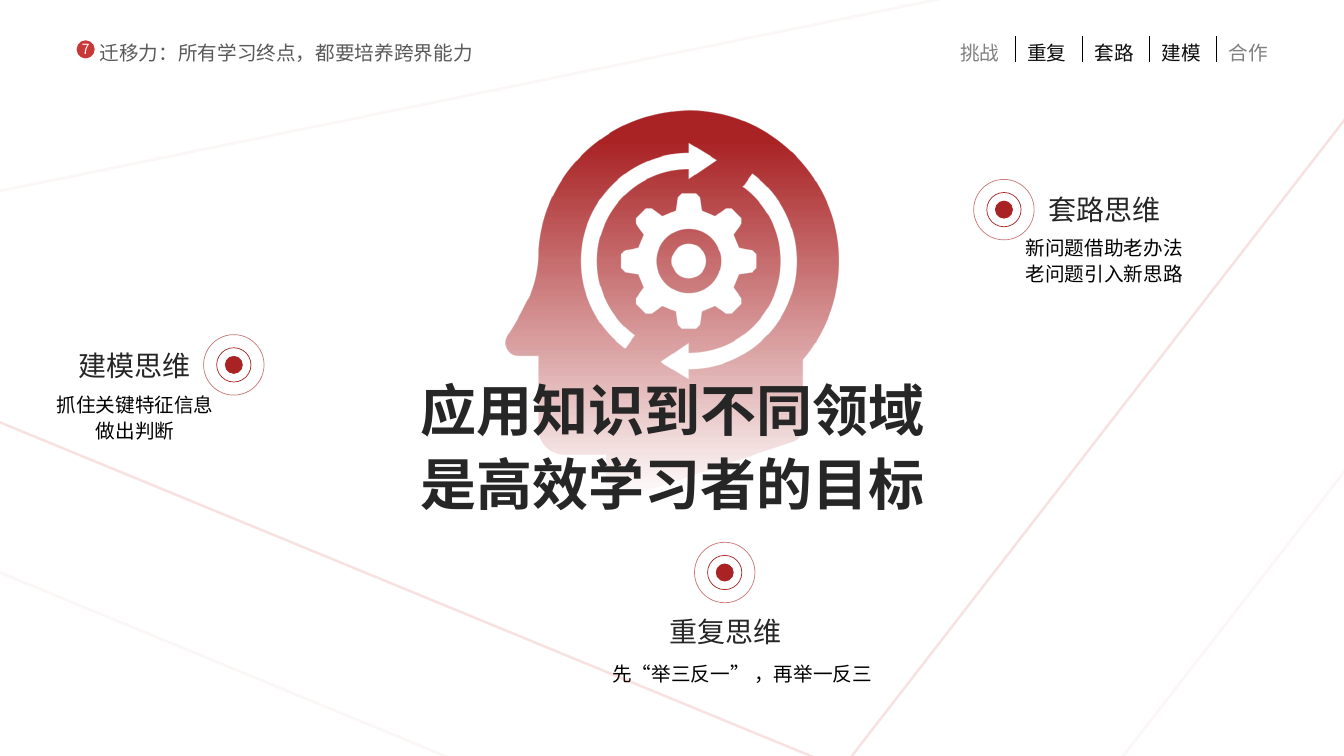
import math

import lxml.etree
import pptx
import pptx.dml.color
import pptx.enum.shapes
import pptx.enum.text
import pptx.oxml.ns
import pptx.util

Inches, Pt = pptx.util.Inches, pptx.util.Pt
RGBColor = pptx.dml.color.RGBColor
PP_ALIGN, MSO_ANCHOR = pptx.enum.text.PP_ALIGN, pptx.enum.text.MSO_ANCHOR
OVAL = pptx.enum.shapes.MSO_SHAPE.OVAL
STRAIGHT = pptx.enum.shapes.MSO_CONNECTOR.STRAIGHT
qn = pptx.oxml.ns.qn

FONT = "Noto Sans CJK SC"
RED = RGBColor(0xCA, 0x37, 0x37)
DEEP_RED = RGBColor(0xA9, 0x22, 0x24)
WHITE = RGBColor(0xFF, 0xFF, 0xFF)
BLACK = RGBColor(0, 0, 0)
NEAR_BLACK = RGBColor(0x0D, 0x0D, 0x0D)
DARK = RGBColor(0x26, 0x26, 0x26)
GREY = RGBColor(0x59, 0x59, 0x59)
LIGHT_GREY = RGBColor(0x80, 0x80, 0x80)
MIL = Inches(1) / 1000  # freeform unit: a thousandth of an inch


def write(frame, text, size, color, spacing=1.0, align=PP_ALIGN.CENTER,
          anchor=MSO_ANCHOR.TOP, bold=False):
    frame.text = text
    frame.word_wrap = True
    frame.vertical_anchor = anchor
    for para in frame.paragraphs:
        para.alignment = align
        para.line_spacing = spacing
        para.space_before = Pt(0)
        for span in para.runs:
            span.font.size = Pt(size)
            span.font.bold = bold
            span.font.color.rgb = color
            span.font.name = FONT
            east_asian = lxml.etree.SubElement(span.font._element, qn("a:ea"))
            east_asian.set("typeface", FONT)


def fade(element, percent):
    for color in element.iter(qn("a:srgbClr")):
        lxml.etree.SubElement(color, qn("a:alpha")).set("val", str(percent * 1000))


deck = pptx.Presentation()
deck.slide_width, deck.slide_height = Inches(40 / 3), Inches(7.5)
page = deck.slides.add_slide(deck.slide_layouts[5])
shapes = page.shapes

# Header with number badge
header = shapes.add_textbox(Inches(0.89), Inches(0.31), Inches(4.66), Inches(0.38))
write(header.text_frame, "迁移力：所有学习终点，都要培养跨界能力", 14, GREY, 1.2, PP_ALIGN.LEFT)
badge = shapes.add_shape(OVAL, Inches(0.76), Inches(0.4), Inches(0.18), Inches(0.18))
badge.shadow.inherit = False
badge.fill.solid()
badge.fill.fore_color.rgb = RED
badge.line.fill.background()
frame = badge.text_frame
frame.margin_left = frame.margin_right = frame.margin_top = frame.margin_bottom = 0
write(frame, "7", 10, WHITE, anchor=MSO_ANCHOR.MIDDLE)
frame.word_wrap = False

# Navigation labels, and every straight line: start, end, colour, width, opacity
lines = []
labels = ["挑战", "重复", "套路", "建模", "合作"]
for index, label in enumerate(labels):
    left = 9.38 + index * 2 / 3
    box = shapes.add_textbox(Inches(left), Inches(0.31), Inches(0.68), Inches(0.38))
    is_end = index in (0, len(labels) - 1)
    write(box.text_frame, label, 14, LIGHT_GREY if is_end else NEAR_BLACK, 1.2)
    if not is_end or index == 0:
        lines.append((left + 0.69, 0.36, left + 0.69, 0.62, BLACK, 0.5, 100))
lines += [
    (-1.92, 3.4, 8.36, 7.63, RED, 1.75, 14),
    (8.35, 7.63, 14.19, 0.09, RED, 1.75, 14),
]

# Large faint triangle behind everything
builder = shapes.build_freeform(-6140, 3150, MIL)
builder.add_line_segments([(18430, -1870), (9510, 9600)])
triangle = builder.convert_to_shape()
triangle.shadow.inherit = False
triangle.fill.background()
triangle.line.color.rgb = RED
triangle.line.width = Pt(2)
fade(triangle.element.spPr, 4)

# Three ways of thinking: target centre, heading place, heading, note place, note
topics = [
    (7.19, 5.68, 6.36, 6.05, "重复思维", 5.88, 6.49, 2.97, "先“举三反一” ，再举一反三"),
    (9.96, 2.08, 10.12, 1.86, "套路思维", 9.74, 2.27, 2.43, "新问题借助老办法\n老问题引入新思路"),
    (2.32, 3.62, 0.5, 3.41, "建模思维", 0.4, 3.83, 1.88, "抓住关键特征信息\n做出判断"),
]
for x, y, heading_x, heading_y, heading, note_x, note_y, note_width, note in topics:
    for size in (0.17, 0.34, 0.6):
        circle = shapes.add_shape(OVAL, Inches(x - size / 2), Inches(y - size / 2),
                                  Inches(size), Inches(size))
        circle.shadow.inherit = False
        circle.line.color.rgb = DEEP_RED
        circle.line.width = Pt(0.5)
        if size == 0.17:
            circle.fill.solid()
            circle.fill.fore_color.rgb = DEEP_RED
        else:
            circle.fill.background()
        if size == 0.6:
            fade(circle.element.spPr, 61)
    box = shapes.add_textbox(Inches(note_x), Inches(note_y), Inches(note_width),
                             Inches(0.36 + 0.25 * note.count("\n")))
    write(box.text_frame, note, 14, BLACK, 1.1)
    box = shapes.add_textbox(Inches(heading_x), Inches(heading_y), Inches(1.67), Inches(0.43))
    write(box.text_frame, heading, 20, DARK, anchor=MSO_ANCHOR.MIDDLE)

# Head outline: a pair is a straight step, six numbers are a Bezier step
head = [
    (6.94, 1.1),
    (7.69, 1.16, 8.3, 1.79, 8.32, 2.55), (8.33, 2.94, 8.19, 3.3, 7.96, 3.57),
    (7.96, 4.24), (7.96, 4.3, 7.92, 4.36, 7.86, 4.38),
    (6.14, 4.96), (6.07, 4.98, 6.01, 4.94, 6.01, 4.87),
    (6.01, 4.51), (5.6, 4.51), (5.45, 4.51, 5.34, 4.39, 5.34, 4.25),
    (5.34, 3.53), (5.14, 3.53), (5.04, 3.53, 4.98, 3.42, 5.03, 3.33),
    (5.09, 3.25, 5.16, 3.12, 5.22, 3), (5.29, 2.88, 5.34, 2.67, 5.34, 2.53),
    (5.34, 2.49), (5.39, 1.68, 6.1, 1.05, 6.94, 1.1),
]

# Arcs around the gear centre as Bezier steps: radius, first and last angle, pieces
arcs = []
for radius, first, last, pieces in [(0.32, 0, 360, 4), (0.17, 0, 360, 4),
                                    (1.07, -54, 90, 2), (0.91, 90, -54, 2)]:
    turn = math.radians(last - first) / pieces
    pull = 4 / 3 * math.tan(turn / 4)
    angle = math.radians(first)
    arc = [(radius * math.cos(angle), radius * math.sin(angle))]
    for piece in range(pieces):
        cos, sin = math.cos(angle), math.sin(angle)
        angle += turn
        next_cos, next_sin = math.cos(angle), math.sin(angle)
        step = (cos - pull * sin, sin + pull * cos,
                next_cos + pull * next_sin, next_sin - pull * next_cos, next_cos, next_sin)
        arc.append(tuple(radius * number for number in step))
    arcs.append(arc)
outer_ring, inner_ring, outer_arc, inner_arc = arcs

# Gear and two arrows cut out of the head
tooth = [(-0.13, -0.5), (-0.11, -0.63), (-0.07, -0.67),
         (0.07, -0.67), (0.11, -0.63), (0.13, -0.5)]
gear = []
for index in range(8):
    cos, sin = math.cos(index * math.pi / 4), math.sin(index * math.pi / 4)
    gear += [(x * cos - y * sin, x * sin + y * cos) for x, y in tooth]
arrow = outer_arc + [(0, 1.17), (-0.28, 1), (0, 0.81)] + inner_arc
opposite_arrow = [tuple(-number for number in step) for step in arrow]
contours = [head]
for contour in (gear, outer_ring, inner_ring, arrow, opposite_arrow):
    contours.append([tuple(number + (6.83, 2.59)[place % 2] for place, number in enumerate(step))
                     for step in contour])

builder = shapes.build_freeform(head[0][0] * 1000, head[0][1] * 1000, MIL)
for contour in contours:
    ends = [(step[-2] * 1000, step[-1] * 1000) for step in contour]
    if contour is not head:
        builder.move_to(*ends[0])
    builder.add_line_segments(ends[1:])
head_icon = builder.convert_to_shape()

# Turn the six-number steps into curves
steps = [step for contour in contours for step in contour[1:]]
left, top = head_icon.left / Inches(1), head_icon.top / Inches(1)
for segment, step in zip(list(head_icon.element.iter(qn("a:lnTo"))), steps):
    if len(step) == 6:
        segment.tag = qn("a:cubicBezTo")
        for place in (0, 2):
            control = lxml.etree.Element(qn("a:pt"))
            control.set("x", str(round((step[place] - left) * 1000)))
            control.set("y", str(round((step[place + 1] - top) * 1000)))
            segment.insert(place // 2, control)

head_icon.shadow.inherit = False
head_icon.line.fill.background()
head_icon.fill.gradient()
head_icon.fill.gradient_angle = 270
top_stop, bottom_stop = head_icon.fill.gradient_stops
top_stop.position, bottom_stop.position = 0.07, 0.99
top_stop.color.rgb = bottom_stop.color.rgb = DEEP_RED
fade(bottom_stop._gs, 0)

# Dividers and faint diagonals
for x1, y1, x2, y2, color, width, opacity in lines:
    line = shapes.add_connector(STRAIGHT, Inches(x1), Inches(y1), Inches(x2), Inches(y2))
    line.line.color.rgb = color
    line.line.width = Pt(width)
    lxml.etree.SubElement(line.element.spPr, qn("a:effectLst"))
    if opacity < 100:
        fade(line.element.spPr, opacity)

# Title, brought in front of the head
title = shapes.title
title.left, title.top = Inches(4.07), Inches(3.61)
title.width, title.height = Inches(5.2), Inches(1.57)
write(title.text_frame, "应用知识到不同领域\n是高效学习者的目标", 40, DARK, 1.1, bold=True)
title.text_frame.word_wrap = False
title.text_frame.auto_size = pptx.enum.text.MSO_AUTO_SIZE.NONE
title.element.getparent().append(title.element)

deck.save("out.pptx")
